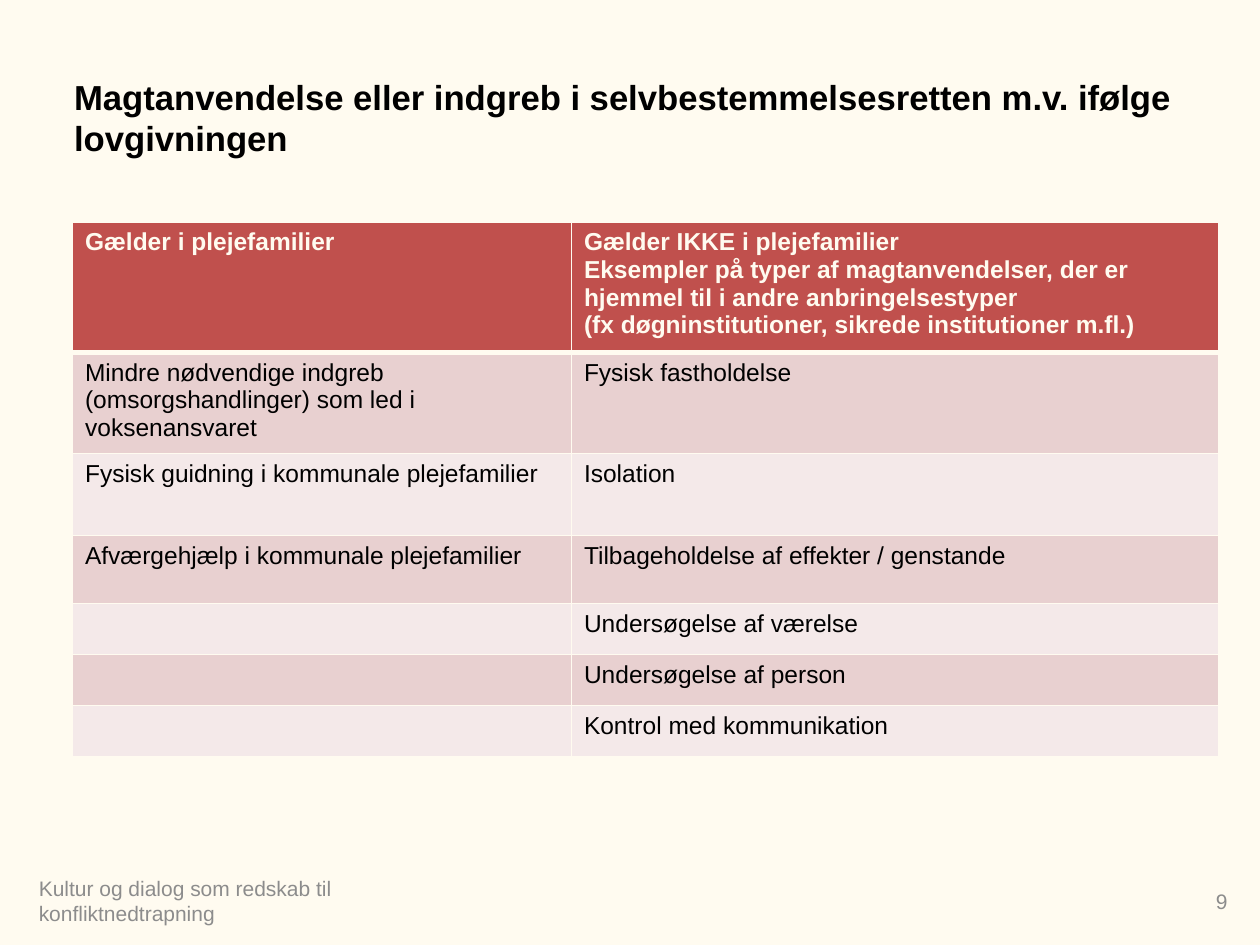
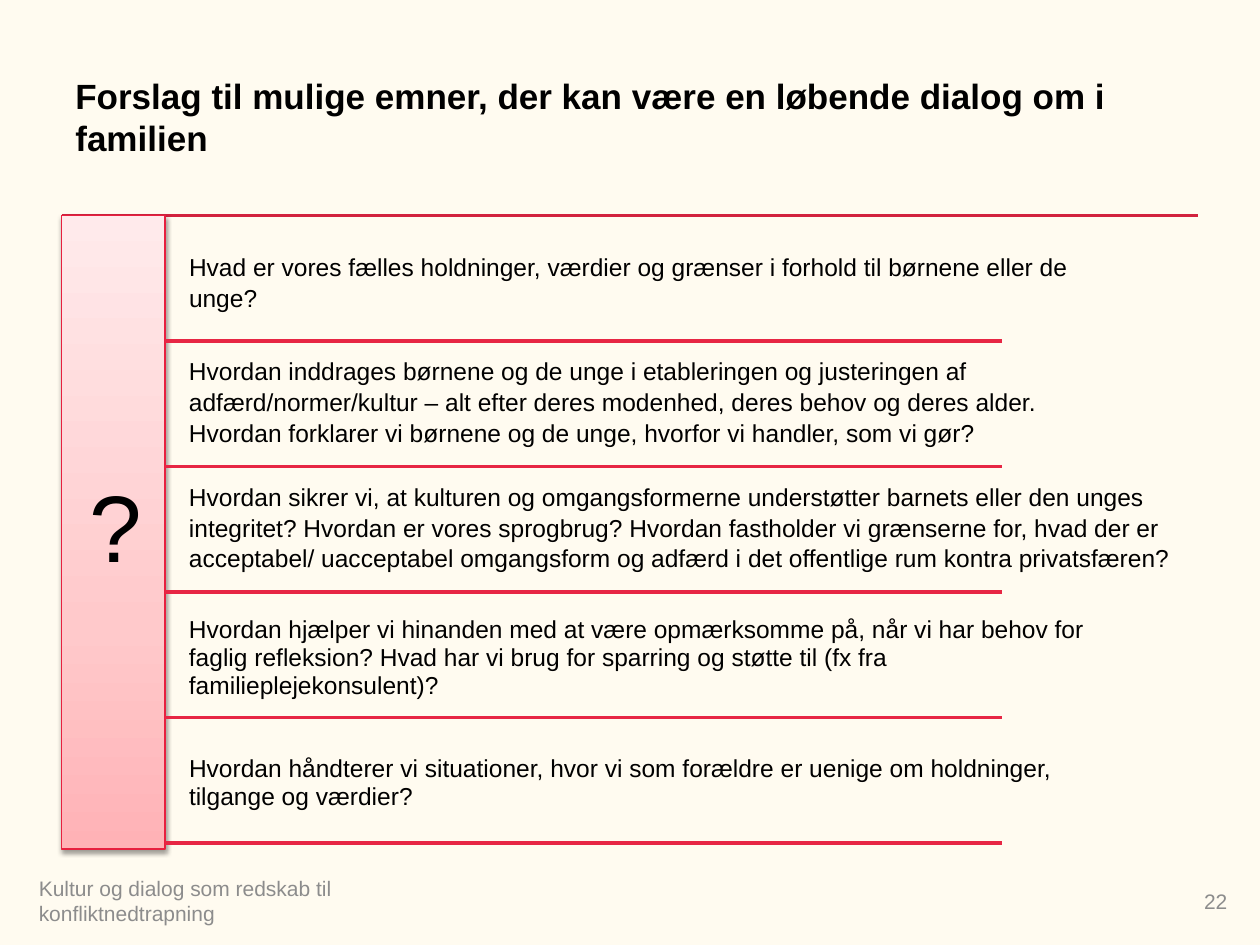
from collections import namedtuple

from lxml import etree
from pptx import Presentation
from pptx import util as u
from pptx.dml.color import RGBColor
from pptx.enum import shapes, text
from pptx.oxml import ns, parse_xml

# The slide is a grid of 100 columns by 75 rows; all boxes count in its cells.
COLS, ROWS = 100, 75
CELL = u.Inches(0.1)
FONT = "Arial"
HUES = {
    "page": "FFFBF0", "ink": "000000", "grey": "8C8C8C",
    "head": "C0504D", "odd": "E8D0D0", "even": "F4E9E9",
    "top": "D2223E", "rule": "E72644", "edge": "E7203F",
    "deep": "FFB2B6", "mid": "FFC9CB", "pale": "FFEAEB",
}
Box = namedtuple("Box", "x y w h")
MID, TOP = text.MSO_ANCHOR.MIDDLE, text.MSO_ANCHOR.TOP
LEFT, RIGHT, CENTER = text.PP_ALIGN.LEFT, text.PP_ALIGN.RIGHT, text.PP_ALIGN.CENTER

FOOT = "Kultur og dialog som redskab til konfliktnedtrapning"
TABLE = [
    ("Gælder i plejefamilier",
     "Gælder IKKE i plejefamilier\n"
     "Eksempler på typer af magtanvendelser, der er hjemmel til i andre anbringelsestyper\n"
     "(fx døgninstitutioner, sikrede institutioner m.fl.)"),
    ("Mindre nødvendige indgreb (omsorgshandlinger) som led i voksenansvaret",
     "Fysisk fastholdelse"),
    ("Fysisk guidning i kommunale plejefamilier", "Isolation"),
    ("Afværgehjælp i kommunale plejefamilier", "Tilbageholdelse af effekter / genstande"),
    ("", "Undersøgelse af værelse"),
    ("", "Undersøgelse af person"),
    ("", "Kontrol med kommunikation"),
]
# Each topic: text, columns wide, anchor, line spacing
TOPICS = [
    ("Hvad er vores fælles holdninger, værdier og grænser i forhold til børnene "
     "eller de unge?", 75.8, MID, 1.05),
    ("Hvordan inddrages børnene og de unge i etableringen og justeringen af "
     "adfærd/normer/kultur – alt efter deres modenhed, deres behov og deres alder. "
     "Hvordan forklarer vi børnene og de unge, hvorfor vi handler, som vi gør?",
     75.6, TOP, 1.05),
    ("Hvordan sikrer vi, at kulturen og omgangsformerne understøtter barnets eller den "
     "unges integritet? Hvordan er vores sprogbrug? Hvordan fastholder vi grænserne for, "
     "hvad der er acceptabel/ uacceptabel omgangsform og adfærd i det offentlige rum "
     "kontra privatsfæren?", 80.6, TOP, 1.05),
    ("Hvordan hjælper vi hinanden med at være opmærksomme på, når vi har behov for "
     "faglig refleksion? Hvad har vi brug for sparring og støtte til (fx fra "
     "familieplejekonsulent)?", 75.6, MID, 0.95),
    ("Hvordan håndterer vi situationer, hvor vi som forældre er uenige om holdninger, "
     "tilgange og værdier?", 75.8, MID, 0.95),
]


def rgb(hue):
    return RGBColor.from_string(HUES[hue])


def grid(*cells):
    """Turn counts of grid cells into lengths."""
    return [int(n * CELL) for n in cells]


def write(frame, words, size, hue="ink", bold=False, align=LEFT, space=None):
    frame.text = words
    for para in frame.paragraphs:
        para.alignment = align
        para.line_spacing = space
        font = para.font
        font.name, font.size, font.bold = FONT, u.Pt(size), bold
        font.color.rgb = rgb(hue)


def label(slide, box, words, size, anchor=MID, inset=None, **style):
    frame = slide.shapes.add_textbox(*grid(*box)).text_frame
    frame.word_wrap = True
    frame.vertical_anchor = anchor
    if inset is not None:
        frame.margin_left = frame.margin_right = inset
        frame.margin_top = frame.margin_bottom = inset
    write(frame, words, size, **style)


def rule(slide, x, y, end, hue):
    line = slide.shapes.add_connector(
        shapes.MSO_CONNECTOR.STRAIGHT, *grid(x, y, end, y))
    line.line.color.rgb = rgb(hue)
    line.line.width = u.Pt(2)
    etree.SubElement(line._element.spPr, ns.qn("a:effectLst"))


def page(deck, title, box, size, num):
    """Add a slide with the shared ground, title and footer."""
    slide = deck.slides.add_slide(deck.slide_layouts[6])
    slide.background.fill.solid()
    slide.background.fill.fore_color.rgb = rgb("page")
    label(slide, box, title, size, bold=True)
    foot = Box(2.1, 69.5, 31.7, 4)
    label(slide, foot, FOOT, 12, hue="grey")
    label(slide, foot._replace(x=66.7), str(num), 12, hue="grey", align=RIGHT)
    return slide


def border(cell, low):
    """Line a cell on all sides; low is the width of the bottom line."""
    props = cell._tc.get_or_add_tcPr()
    for spot, (side, width) in enumerate(zip("LRTB", (1, 1, 1, low))):
        props.insert(spot, parse_xml(
            f'<a:ln{side} {ns.nsdecls("a")} w="{u.Pt(width)}"><a:solidFill>'
            f'<a:srgbClr val="{HUES["page"]}"/></a:solidFill></a:ln{side}>'))


def rights(slide, box):
    """Table of what applies in foster families and what does not."""
    table = slide.shapes.add_table(len(TABLE), 2, *grid(*box)).table
    for col, wide in zip(table.columns, grid(39.6, box.w - 39.6)):
        col.width = wide
    for row, high in zip(table.rows, grid(9.6, 7.5, 6.5, 5.4, 4.05, 4.05, 4.05)):
        row.height = high
    for r, words in enumerate(TABLE):
        head = r == 0
        hue = "head" if head else ("even", "odd")[r % 2]
        for c, word in enumerate(words):
            cell = table.cell(r, c)
            write(cell.text_frame, word, 14, "page" if head else "ink", bold=head)
            cell.fill.solid()
            cell.fill.fore_color.rgb = rgb(hue)
            border(cell, 3 if head else 1)


def pillar(slide, box):
    """Shaded bar with the question mark."""
    bar = slide.shapes.add_shape(shapes.MSO_SHAPE.RECTANGLE, *grid(*box))
    bar.fill.gradient()
    bar.fill.gradient_angle = 90
    stops = bar._element.spPr.find(".//" + ns.qn("a:gsLst"))
    stops.clear()
    for pos, hue in ((0, "deep"), (35, "mid"), (100, "pale")):
        stops.append(parse_xml(
            f'<a:gs {ns.nsdecls("a")} pos="{pos * 1000}">'
            f'<a:srgbClr val="{HUES[hue]}"/></a:gs>'))
    bar.line.color.rgb = rgb("edge")
    bar.line.width = u.Pt(0.75)
    bar.shadow.inherit = False
    bar._element.spPr.find(ns.qn("a:effectLst")).append(parse_xml(
        f'<a:outerShdw {ns.nsdecls("a")} blurRad="{u.Pt(3.1)}" dist="{u.Pt(1.6)}" '
        f'dir="5400000" rotWithShape="0"><a:srgbClr val="{HUES["ink"]}">'
        '<a:alpha val="38000"/></a:srgbClr></a:outerShdw>'))
    frame = bar.text_frame
    frame.vertical_anchor = MID
    frame.margin_left, frame.margin_right = u.Inches(0.04), 0
    write(frame, "?", 54, align=CENTER, space=0.9)


def topics(slide, box):
    """Question bar with one ruled row per topic."""
    wide = 8.2
    step = (box.h - 0.5) / len(TOPICS)
    rule(slide, box.x, box.y, box.x + box.w, "top")
    pillar(slide, box._replace(w=wide))
    left = box.x + wide
    for i, (words, span, anchor, space) in enumerate(TOPICS):
        y = box.y + 0.5 + i * step
        label(slide, Box(left + 1.3, y, span, step - 0.5), words, 14,
              anchor, u.Inches(0.06), space=space)
        rule(slide, left, y + step - 0.5, left + 66.4, "rule")


def main():
    deck = Presentation()
    deck.slide_width, deck.slide_height = grid(COLS, ROWS)
    slide = page(deck, "Magtanvendelse eller indgreb i selvbestemmelsesretten m.v. "
                 "ifølge lovgivningen\v", Box(4.9, 6.6, 91.3, 8.7), 19.8, 9)
    rights(slide, Box(5.75, 17.65, 91, 41.15))
    slide = page(deck, "Forslag til mulige emner, der kan være en løbende dialog om i "
                 "familien", Box(5, 3, 90, 12.5), 20, 22)
    topics(slide, Box(4.9, 17.1, 90.2, 50.3))
    deck.save("out.pptx")


if __name__ == "__main__":
    main()
